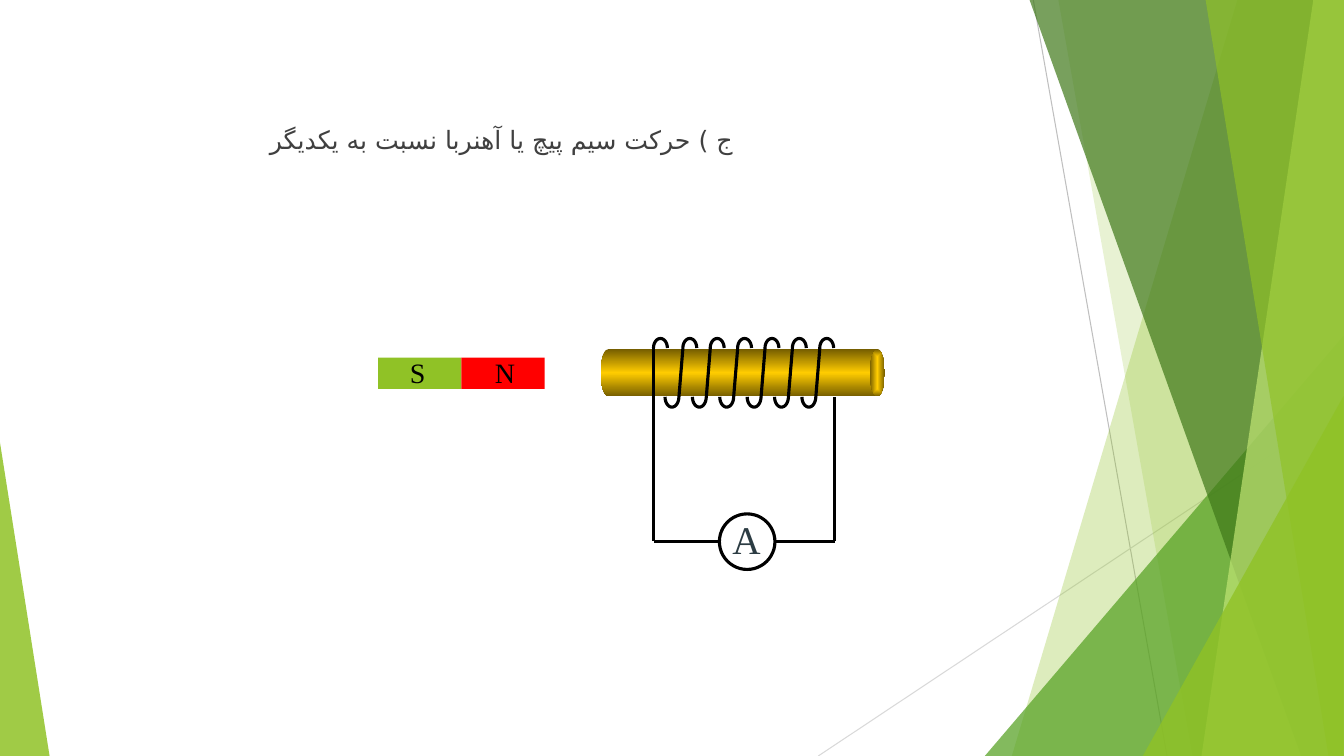
from dataclasses import dataclass
from math import cos, pi, sin

from lxml.etree import SubElement
from pptx import Presentation
from pptx.dml.color import RGBColor
from pptx.enum.shapes import MSO_CONNECTOR, MSO_SHAPE
from pptx.enum.text import MSO_AUTO_SIZE, PP_ALIGN
from pptx.oxml import parse_xml
from pptx.oxml.ns import nsdecls, qn
from pptx.shapes.autoshape import Shape
from pptx.shapes.shapetree import GroupShapes
from pptx.util import Cm, Pt

COLORS = {
    "lime": "90C226", "green": "54A021", "forest": "3F7819", "pale": "C0E474",
    "light_gray": "D9D9D9", "gray": "BFBFBF", "text": "404040", "slate": "2C3C43",
    "black": "000000", "red": "FF0000", "gold": "FFCC00", "bronze": "765E00",
}
WIDTH, HEIGHT = 33.87, 19.05
BAND_TOP = -0.02
SERIF = "Times New Roman"
ARABIC_SCRIPT = "DejaVu Sans"
WIRE = 2.25
ROD_TOP, ROD_HEIGHT = 8.8, 1.19
COIL_TOP, COIL_BOTTOM = 8.77, 10.0
COIL_LEFT, COIL_RIGHT = 16.47, 21.04
CIRCUIT_Y = 13.64


@dataclass(frozen=True)
class Band:
    """Facet that runs from a slanted left edge to the right slide edge."""
    top_left: float
    bottom_left: float
    color: str
    opacity: int


@dataclass(frozen=True)
class Wedge:
    """Right triangle standing on the bottom slide edge; peak 0 is left, 1 right."""
    left: float
    top: float
    width: float
    peak: int
    color: str
    opacity: int


@dataclass(frozen=True)
class Line:
    start: tuple[float, float]
    end: tuple[float, float]
    color: str = "black"
    weight: float = WIRE


@dataclass(frozen=True)
class Label:
    text: str
    box: tuple[float, float, float, float]
    size: int
    color: str
    font: str = SERIF
    wrap: bool = False


FACETS = [
    Band(31.19, 25.5, "lime", 30),
    Band(26.67, 30.05, "lime", 20),
    Wedge(24.82, 8.46, 9.04, 1, "green", 72),
    Band(25.94, 32.79, "forest", 70),
    Band(33.1, 30.28, "pale", 70),
    Band(30.38, 33.48, "lime", 65),
    Wedge(28.8, 9.98, 5.06, 1, "lime", 80),
    Wedge(0, 11.15, 1.25, 0, "lime", 85),
]
BACKDROP_LINES = [
    Line((26.04, 0), (29.41, HEIGHT), "gray", 0.75),
    Line((WIDTH, 10.24), (20.62, HEIGHT), "light_gray", 0.75),
]
LEADS = [
    Line((COIL_RIGHT, COIL_BOTTOM), (COIL_RIGHT, CIRCUIT_Y)),
    Line((COIL_LEFT, COIL_BOTTOM), (COIL_LEFT, CIRCUIT_Y)),
    Line((COIL_LEFT, CIRCUIT_Y), (18.14, CIRCUIT_Y)),
    Line((19.54, CIRCUIT_Y), (COIL_RIGHT, CIRCUIT_Y)),
]
HEADING = Label("ج ) حركت سيم پيچ يا آهنربا نسبت به يكديگر",
                (6.55, 3.0, 21.59, 2.13), 18, "text", "Karla", True)
AMMETER = Label("A", (18.21, 12.85, 1.22, 1.45), 28, "slate")
POLES = [
    (9.53, "lime", Label("S", (10.08, 8.84, 0.91, 1.09), 20, "black")),
    (11.63, "red", Label("N", (12.22, 8.84, 1.02, 1.09), 20, "black")),
]


def rgb(name: str) -> RGBColor:
    return RGBColor.from_string(COLORS[name])


def paint(shape: Shape, color: str, opacity: int = 100) -> None:
    shape.shadow.inherit = False
    shape.line.fill.background()
    shape.fill.solid()
    shape.fill.fore_color.rgb = rgb(color)
    if opacity < 100:
        srgb = shape._element.spPr.find(f".//{qn('a:srgbClr')}")
        SubElement(srgb, qn("a:alpha"), val=str(opacity * 1000))


def paint_gradient(shape: Shape, stops: list[tuple[int, str]], direction: str) -> None:
    """Fill with a gradient; direction is the XML that follows the stop list."""
    paint(shape, stops[0][1])
    stop_xml = "".join(f'<a:gs pos="{position * 1000}"><a:srgbClr val="{COLORS[color]}"/></a:gs>'
                       for position, color in stops)
    gradient = parse_xml(f'<a:gradFill {nsdecls("a")} rotWithShape="1">'
                         f"<a:gsLst>{stop_xml}</a:gsLst>{direction}</a:gradFill>")
    properties = shape._element.spPr
    properties.replace(properties.find(qn("a:solidFill")), gradient)


def outline(shape: Shape) -> None:
    shape.shadow.inherit = False
    shape.fill.background()
    shape.line.color.rgb = rgb("black")
    shape.line.width = Pt(WIRE)


def draw_polyline(shapes: GroupShapes, points: list[tuple[float, float]], close: bool) -> Shape:
    (start_x, start_y), *rest = [(Cm(x), Cm(y)) for x, y in points]
    builder = shapes.build_freeform(start_x, start_y)
    builder.add_line_segments(rest, close=close)
    return builder.convert_to_shape()


def draw_line(shapes: GroupShapes, line: Line) -> None:
    ends = [Cm(value) for value in (*line.start, *line.end)]
    connector = shapes.add_connector(MSO_CONNECTOR.STRAIGHT, *ends)
    connector.line.color.rgb = rgb(line.color)
    connector.line.width = Pt(line.weight)
    SubElement(connector._element.spPr, qn("a:effectLst"))


def draw_preset(shapes: GroupShapes, kind: MSO_SHAPE, *box: float) -> Shape:
    return shapes.add_shape(kind, *map(Cm, box))


def draw_facet(shapes: GroupShapes, facet: Band | Wedge) -> None:
    if isinstance(facet, Band):
        corners = [(facet.top_left, BAND_TOP), (WIDTH, BAND_TOP),
                   (WIDTH, HEIGHT), (facet.bottom_left, HEIGHT)]
        shape = draw_polyline(shapes, corners, close=True)
    else:
        shape = draw_preset(shapes, MSO_SHAPE.ISOSCELES_TRIANGLE,
                            facet.left, facet.top, facet.width, HEIGHT - facet.top)
        shape.adjustments[0] = facet.peak
    paint(shape, facet.color, facet.opacity)


def draw_label(shapes: GroupShapes, label: Label) -> Shape:
    box = shapes.add_textbox(*map(Cm, label.box))
    frame = box.text_frame
    frame.word_wrap = label.wrap
    frame.auto_size = MSO_AUTO_SIZE.NONE if label.wrap else MSO_AUTO_SIZE.SHAPE_TO_FIT_TEXT
    frame.paragraphs[0].alignment = PP_ALIGN.LEFT
    run = frame.paragraphs[0].add_run()
    run.text = label.text
    for attribute, value in {"name": label.font, "size": Pt(label.size)}.items():
        setattr(run.font, attribute, value)
    run.font.color.rgb = rgb(label.color)
    return box


def draw_heading(shapes: GroupShapes) -> None:
    paragraph = draw_label(shapes, HEADING).text_frame.paragraphs[0]
    paragraph.space_before = Pt(10)
    SubElement(paragraph.runs[0]._r.get_or_add_rPr(), qn("a:cs"), typeface=ARABIC_SCRIPT)


def draw_half_loop(shapes: GroupShapes, left: float, base: float, width: float, rise: float) -> None:
    """Half ellipse over the base line, or under it when rise is negative."""
    steps = 16
    angles = [pi * step / steps for step in range(steps + 1)]
    points = [(left + width / 2 * (1 - cos(angle)), base - rise * sin(angle)) for angle in angles]
    outline(draw_polyline(shapes, points, close=False))


def draw_rod(shapes: GroupShapes) -> None:
    bands = [(0, "bronze"), (50, "gold"), (100, "bronze")]
    for kind, left, width in ((MSO_SHAPE.OVAL, 15.14, 0.38), (MSO_SHAPE.RECTANGLE, 15.32, 6.81)):
        part = draw_preset(shapes, kind, left, ROD_TOP, width, ROD_HEIGHT)
        paint_gradient(part, bands, '<a:lin ang="5400000" scaled="1"/>')
    face = draw_preset(shapes, MSO_SHAPE.OVAL, 21.92, ROD_TOP, 0.38, ROD_HEIGHT)
    paint_gradient(face, [(0, "gold"), (100, "bronze")],
                   '<a:path path="shape"><a:fillToRect l="50000" t="50000" r="50000" b="50000"/></a:path>')


def draw_coil(shapes: GroupShapes) -> None:
    turns = [17.21 + 0.69 * turn for turn in range(6)]
    for left in (COIL_LEFT, *turns):
        slant = 0 if left == COIL_LEFT else 0.1
        draw_half_loop(shapes, left, COIL_TOP, 0.35, 0.24)
        draw_line(shapes, Line((left, COIL_TOP), (left - slant, COIL_BOTTOM)))
    for left in turns:
        draw_half_loop(shapes, left - 0.45, COIL_BOTTOM, 0.35, -0.26)


def main() -> None:
    deck = Presentation()
    deck.slide_width, deck.slide_height = Cm(WIDTH), Cm(HEIGHT)
    slide = deck.slides.add_slide(deck.slide_layouts[6])

    backdrop = slide.shapes.add_group_shape().shapes
    for line in BACKDROP_LINES:
        draw_line(backdrop, line)
    for facet in FACETS:
        draw_facet(backdrop, facet)
    draw_heading(slide.shapes)

    circuit = slide.shapes.add_group_shape().shapes
    draw_rod(circuit)
    draw_coil(circuit)
    outline(draw_preset(circuit, MSO_SHAPE.OVAL, 18.13, 12.95, 1.4, 1.4))
    for lead in LEADS:
        draw_line(circuit, lead)
    draw_label(circuit, AMMETER)

    magnet = slide.shapes.add_group_shape().shapes
    for left, color, label in POLES:
        paint(draw_preset(magnet, MSO_SHAPE.RECTANGLE, left, 9.01, 2.1, 0.79), color)
        draw_label(magnet, label)

    deck.save("out.pptx")


if __name__ == "__main__":
    main()
